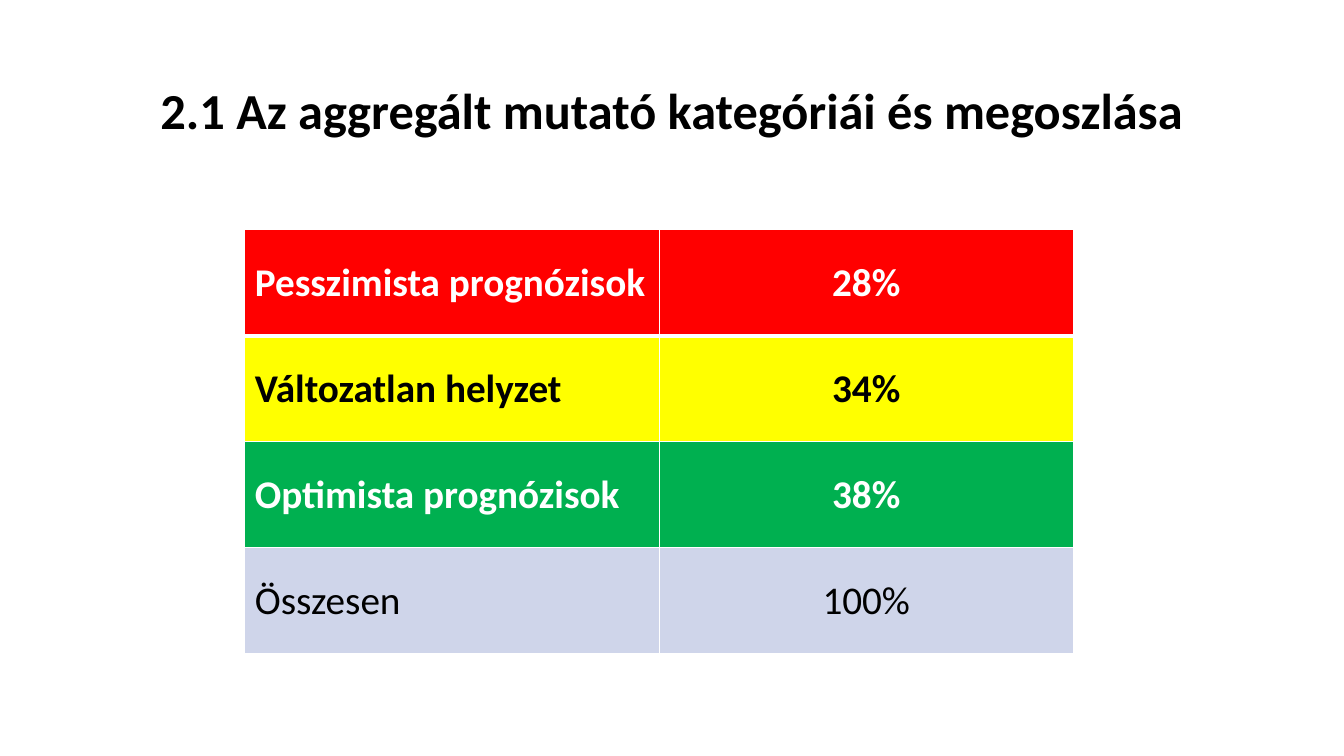
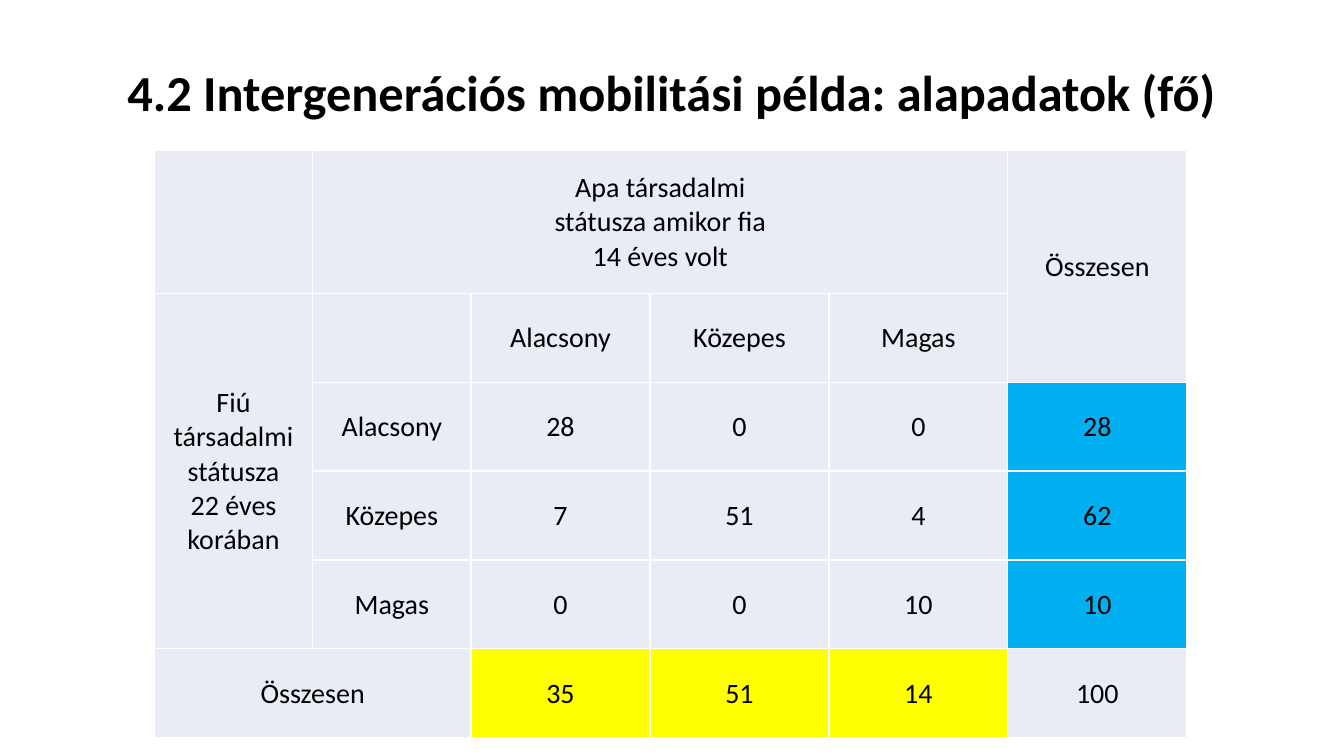
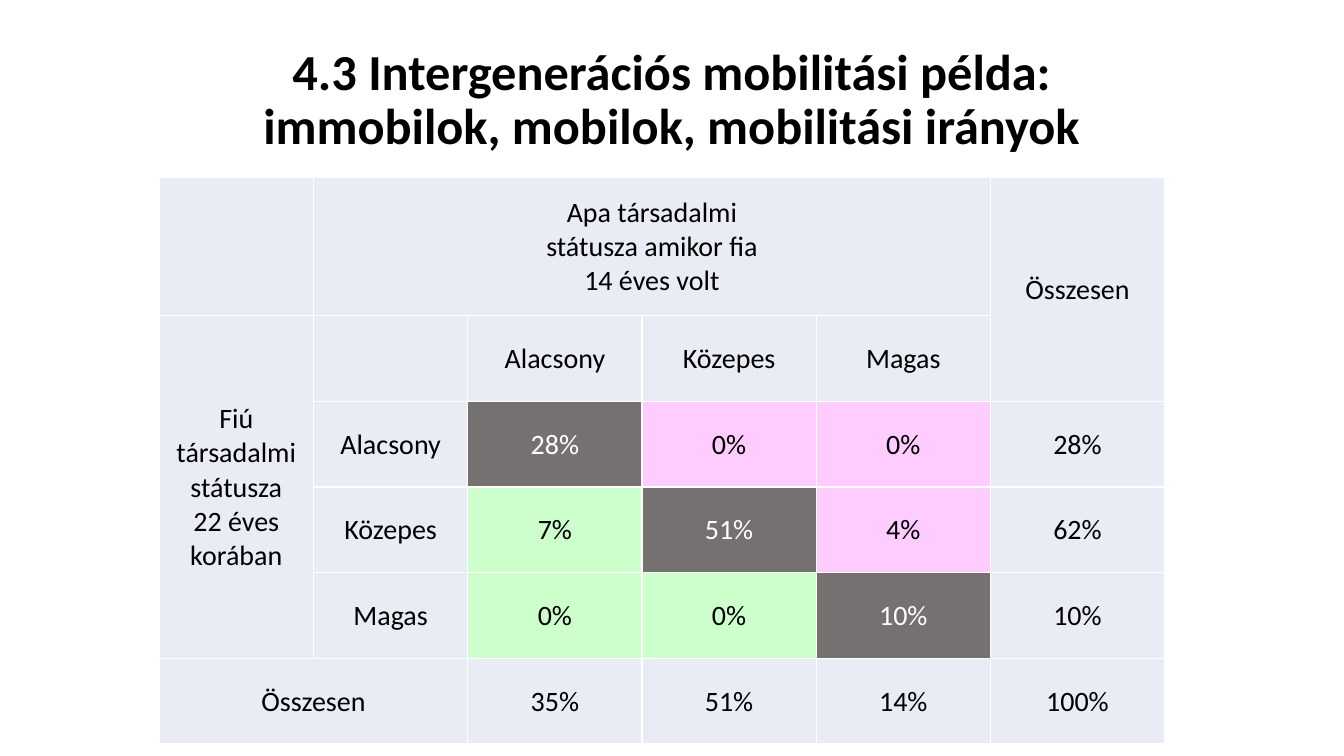
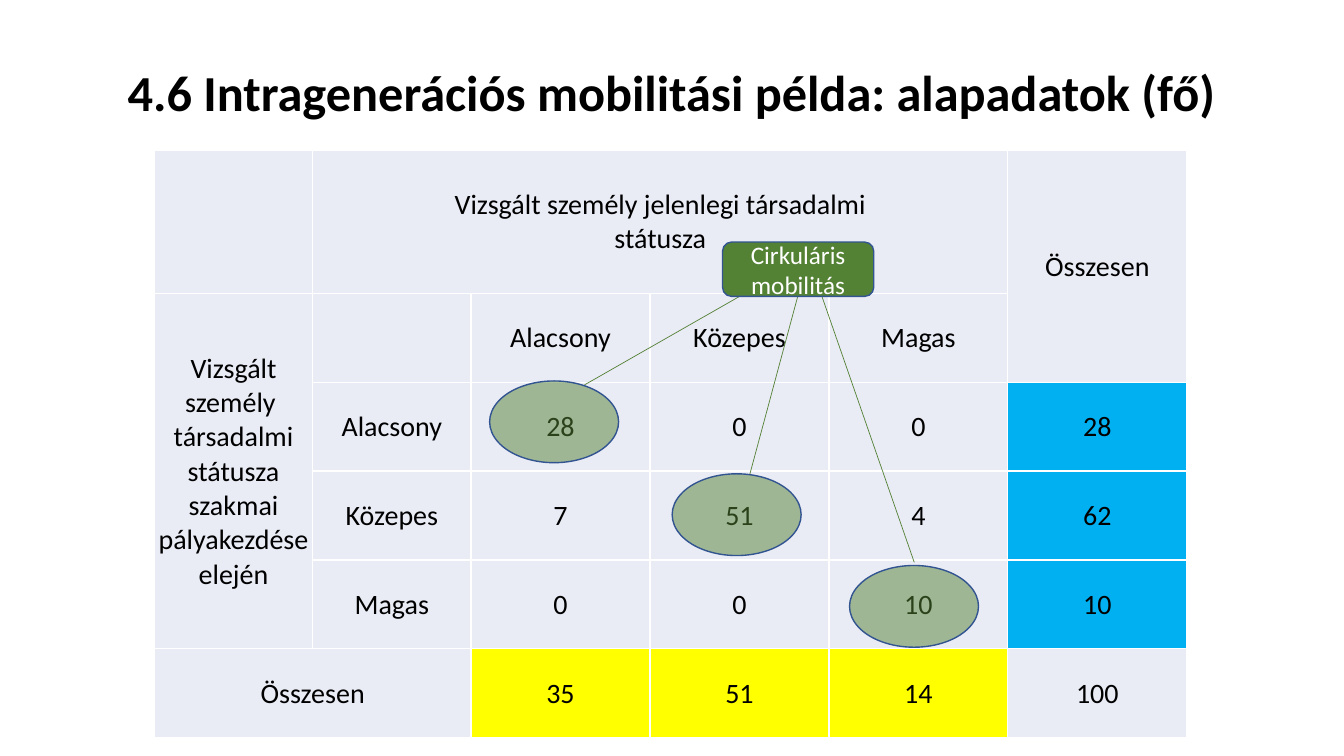
from lxml.etree import SubElement
from pptx import Presentation
from pptx.dml.color import RGBColor
from pptx.enum.shapes import MSO_CONNECTOR, MSO_SHAPE
from pptx.enum.text import MSO_ANCHOR, MSO_AUTO_SIZE, PP_ALIGN
from pptx.oxml.ns import qn
from pptx.util import Cm, Pt

BLACK = RGBColor(0x00, 0x00, 0x00)
WHITE = RGBColor(0xFF, 0xFF, 0xFF)
RED = RGBColor(0xFF, 0x00, 0x00)
YELLOW = RGBColor(0xFF, 0xFF, 0x00)
GREEN = RGBColor(0x00, 0xB0, 0x50)
BLUE = RGBColor(0x00, 0xB0, 0xF0)
PALE = RGBColor(0xE9, 0xEB, 0xF5)
MIST = RGBColor(0xCF, 0xD5, 0xEA)
GRAY = RGBColor(0x76, 0x71, 0x71)
PINK = RGBColor(0xFF, 0xCC, 0xFF)
MINT = RGBColor(0xCC, 0xFF, 0xCC)
MOSS = RGBColor(0x54, 0x82, 0x35)
NAVY = RGBColor(0x32, 0x54, 0x91)

FONT = "Calibri"
LEVELS = ["Alacsony", "Közepes", "Magas"]
TOTAL = "Összesen"
COUNTS = [[28, 0, 0], [7, 51, 4], [0, 0, 10]]
TIGHT = {"margin_left": Cm(0.03), "margin_right": Cm(0.03),
         "margin_top": Cm(0.03), "margin_bottom": 0}
WIDE = {"left": 3.89, "top": 3.78, "cols": [3.99] * 2 + [4.51] * 4,
        "rows": [3.61] + [2.24] * 5}
SMALL = {"left": 4.01, "top": 4.47, "cols": [3.89] * 2 + [4.39] * 4,
         "rows": [3.48] + [2.16] * 5}
FATHER = "Apa társadalmi\vstátusza amikor fia\v14 éves volt"
SON = "Fiú társadalmi\vstátusza\n22 éves\vkorában"
NOW = "Vizsgált személy jelenlegi társadalmi\vstátusza"
START = "Vizsgált személy \vtársadalmi státusza\nszakmai pályakezdése elején"


def apply(item, values):
    for name, value in values.items():
        setattr(item, name, value)


class Deck:
    def __init__(self):
        self.file = Presentation()
        apply(self.file, {"slide_width": Cm(33.87), "slide_height": Cm(19.05)})
        self.slide = None

    def put(self, frame, text, size, color=BLACK, bold=False,
            align=PP_ALIGN.CENTER, lead=None):
        frame.text = text
        for para in frame.paragraphs:
            apply(para, {"alignment": align, "line_spacing": lead})
            for run in para.runs:
                apply(run.font, {"name": FONT, "size": Pt(size), "bold": bold})
                run.font.color.rgb = color

    # Slide and title
    def page(self, text, height):
        self.slide = self.file.slides.add_slide(self.file.slide_layouts[5])
        title = self.slide.shapes.title
        apply(title, {"left": Cm(2.33), "top": Cm(1.02),
                      "width": Cm(29.21), "height": Cm(height)})
        apply(title.text_frame, {"auto_size": MSO_AUTO_SIZE.NONE, "word_wrap": True,
                                 "vertical_anchor": MSO_ANCHOR.MIDDLE})
        self.put(title.text_frame, text, 36, bold=True, lead=0.9)

    # Tables
    def grid(self, left, top, cols, rows):
        table = self.slide.shapes.add_table(
            len(rows), len(cols), Cm(left), Cm(top), Cm(sum(cols)), Cm(sum(rows))).table
        apply(table, {"first_row": False, "horz_banding": False})
        for col, width in zip(table.columns, cols):
            col.width = Cm(width)
        for row, height in zip(table.rows, rows):
            row.height = Cm(height)
        return table

    def cell(self, cell, fill, above=1, below=1):
        cell.vertical_anchor = MSO_ANCHOR.MIDDLE
        props = cell._tc.get_or_add_tcPr()
        for side, width in {"L": 1, "R": 1, "T": above, "B": below}.items():
            line = SubElement(props, qn(f"a:ln{side}"), w=str(Pt(width)))
            SubElement(SubElement(line, qn("a:solidFill")), qn("a:srgbClr"), val=str(WHITE))
        cell.fill.solid()
        cell.fill.fore_color.rgb = fill

    def shares(self, lines):
        table = self.grid(6.17, 5.79, [10.44] * 2, [2.67] * 4)
        for r, (name, share, fill, color, bold) in enumerate(lines):
            for c, text in enumerate((name, share)):
                cell = table.cell(r, c)
                self.cell(cell, fill, 3 if r == 1 else 1, 3 if r == 0 else 1)
                align = PP_ALIGN.CENTER if c else PP_ALIGN.LEFT
                self.put(cell.text_frame, text, 28, color, bold, align)

    def cross(self, place, head, side, tint, unit=""):
        """Draw a status table; tint gives fill and text colour of a number."""
        table = self.grid(**place)
        values = [row + [sum(row)] for row in COUNTS]
        values.append([sum(col) for col in zip(*values)])
        texts = {(0, 1): head, (0, 5): TOTAL, (1, 0): side, (5, 0): TOTAL}
        for i, level in enumerate(LEVELS):
            texts[1, i + 2] = texts[i + 2, 1] = level
        paints = {}
        for r, row in enumerate(values):
            for c, value in enumerate(row):
                texts[r + 2, c + 2] = f"{value}{unit}"
                paints[r + 2, c + 2] = tint(r, c)
        for r in range(len(table.rows)):
            for c in range(len(table.columns)):
                cell = table.cell(r, c)
                fill, color = paints.get((r, c), (PALE, BLACK))
                self.cell(cell, fill)
                apply(cell, TIGHT)
                if (r, c) in texts:
                    self.put(cell.text_frame, texts[r, c], 20, color)
        for first, last in [((0, 1), (0, 4)), ((0, 5), (1, 5)),
                            ((1, 0), (4, 0)), ((5, 0), (5, 1))]:
            table.cell(*first).merge(table.cell(*last))

    # Marks
    def shape(self, kind, left, top, width, height, alpha=None):
        shape = self.slide.shapes.add_shape(kind, Cm(left), Cm(top), Cm(width), Cm(height))
        shape.shadow.inherit = False
        shape.fill.solid()
        shape.fill.fore_color.rgb = MOSS
        shape.line.color.rgb = NAVY
        shape.line.width = Pt(1)
        if alpha:
            color = shape.element.spPr.find(qn("a:solidFill")).find(qn("a:srgbClr"))
            SubElement(color, qn("a:alpha"), val=str(alpha * 1000))
        return shape

    def label(self, text, *place):
        frame = self.shape(MSO_SHAPE.ROUNDED_RECTANGLE, *place).text_frame
        apply(frame, {"word_wrap": True, "vertical_anchor": MSO_ANCHOR.MIDDLE})
        self.put(frame, text, 18, WHITE)

    def line(self, start, end):
        line = self.slide.shapes.add_connector(
            MSO_CONNECTOR.STRAIGHT, *(Cm(n) for n in start + end))
        line.line.color.rgb = MOSS
        line.line.width = Pt(0.5)
        SubElement(line.element.spPr, qn("a:effectLst"))


def sums(r, c):
    """Tint only the totals."""
    if r < 3 and c == 3:
        return BLUE, BLACK
    return (YELLOW if r == 3 and c < 3 else PALE), BLACK


def moves(r, c):
    """Tint the diagonal and the cells above and below it."""
    if 3 in (r, c):
        return PALE, BLACK
    if r == c:
        return GRAY, WHITE
    return (PINK if c > r else MINT), BLACK


def main():
    deck = Deck()

    # Shares of the categories
    deck.page("2.1 Az aggregált mutató kategóriái és megoszlása", 3.68)
    deck.shares([("Pesszimista prognózisok", "28%", RED, WHITE, True),
                 ("Változatlan helyzet", "34%", YELLOW, BLACK, True),
                 ("Optimista prognózisok", "38%", GREEN, WHITE, True),
                 (TOTAL, "100%", MIST, BLACK, False)])

    # Between generations: counts
    deck.page("4.2 Intergenerációs mobilitási példa: alapadatok (fő)", 2.77)
    deck.cross(WIDE, FATHER, SON, sums)

    # Between generations: directions
    deck.page("4.3 Intergenerációs mobilitási példa:\vimmobilok, mobilok, mobilitási irányok", 3.05)
    deck.cross(SMALL, FATHER, SON, moves, "%")

    # Within a generation: counts and marked diagonal
    deck.page("4.6 Intragenerációs mobilitási példa: alapadatok (fő)", 2.77)
    deck.cross(WIDE, NOW, START, sums)
    for left, top in [(12.34, 9.6), (16.94, 11.94), (21.41, 14.25)]:
        deck.shape(MSO_SHAPE.OVAL, left, top, 3.25, 2.06, alpha=50)
    for tip in [(14.73, 9.7), (18.9, 11.94), (23.04, 14.17)]:
        deck.line(tip, (20.37, 6.48))
    deck.label("Cirkuláris mobilitás", 18.21, 6.1, 3.81, 1.37)

    deck.file.save("out.pptx")


if __name__ == "__main__":
    main()
